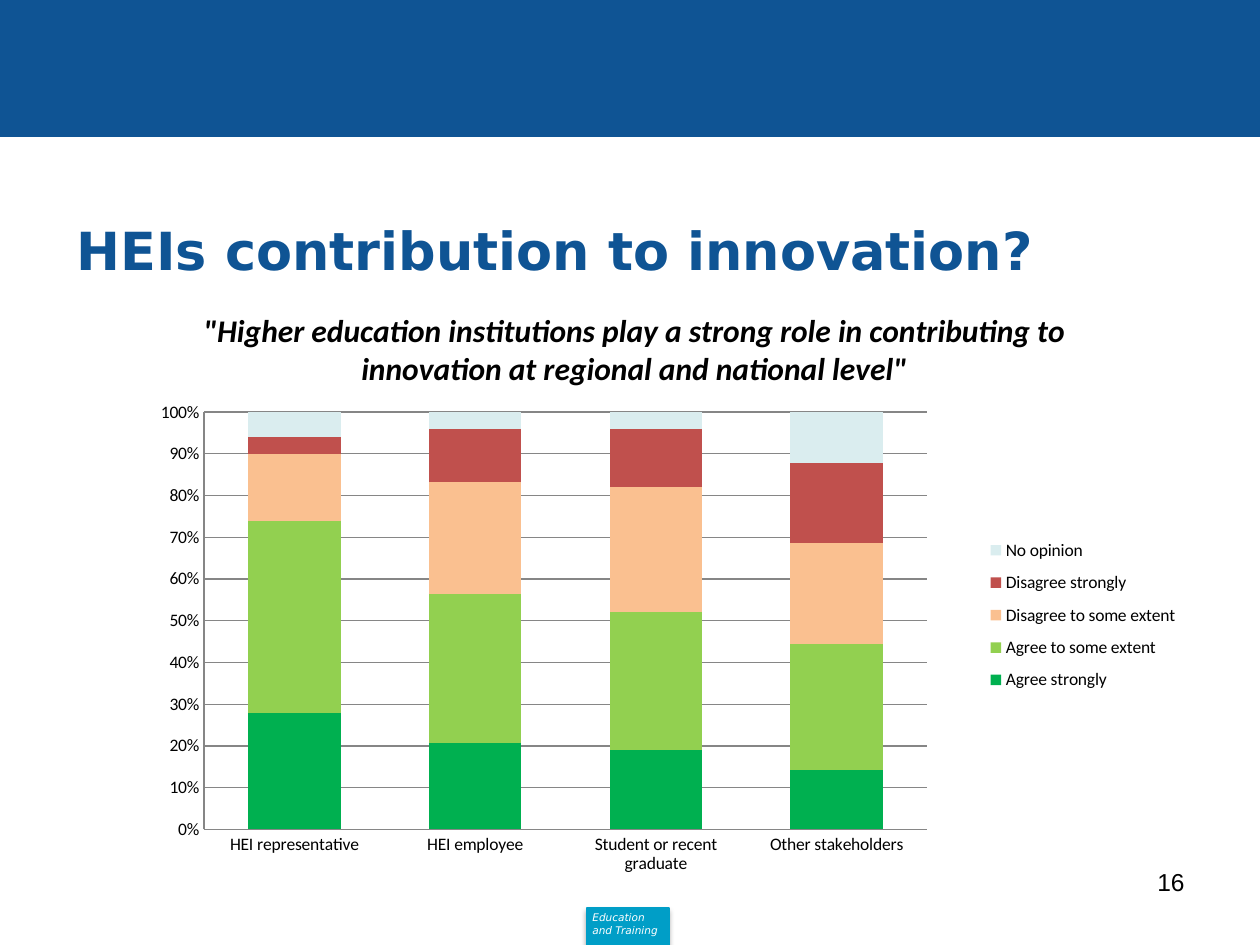
"""Build the slide on how higher education institutions contribute to innovation."""
from lxml import etree
from pptx import Presentation
from pptx import util as u
from pptx.chart.data import CategoryChartData
from pptx.dml.color import RGBColor
from pptx.enum import chart as kinds, shapes, text
from pptx.oxml import ns

NAVY = RGBColor(0x0F, 0x54, 0x94)
CYAN = RGBColor(0x00, 0x9E, 0xC7)
WHITE = RGBColor(0xFF, 0xFF, 0xFF)
BLACK = RGBColor(0x00, 0x00, 0x00)
GREY = RGBColor(0x86, 0x86, 0x86)
GREEN = RGBColor(0x00, 0xB0, 0x50)
LIME = RGBColor(0x92, 0xD0, 0x50)
PEACH = RGBColor(0xFA, 0xC0, 0x90)
RED = RGBColor(0xC0, 0x50, 0x4D)
ICE = RGBColor(0xDA, 0xED, 0xEF)
SCALE = u.Inches(1) / 126

GROUPS = ["HEI representative", "HEI employee", "Student or recent graduate", "Other stakeholders"]
ANSWERS = [
    ("Agree strongly", (28, 21, 19, 14), GREEN),
    ("Agree to some extent", (46, 36, 33, 30), LIME),
    ("Disagree to some extent", (16, 27, 30, 24), PEACH),
    ("Disagree strongly", (4, 13, 14, 19), RED),
    ("No opinion", (6, 4, 4, 12), ICE),
]


def px(*lengths):
    return [round(length * SCALE) for length in lengths]


def place(part, index, frame, inner=False):
    for old in part.findall(ns.qn("c:layout")):
        part.remove(old)
    layout = etree.Element(ns.qn("c:layout"))
    manual = etree.SubElement(layout, ns.qn("c:manualLayout"))
    settings = [("layoutTarget", "inner")] if inner else []
    settings += [("xMode", "edge"), ("yMode", "edge"), *zip("xywh", frame)]
    for name, value in settings:
        etree.SubElement(manual, ns.qn(f"c:{name}"), val=str(value))
    part.insert(index, layout)


deck = Presentation()
deck.slide_width, deck.slide_height = px(1260, 945)
page = deck.slides.add_slide(deck.slide_layouts[5])

for frame, color in [((0, 0, 1260, 136), NAVY), ((587, 908, 82, 38), CYAN)]:
    block = page.shapes.add_shape(shapes.MSO_SHAPE.RECTANGLE, *px(*frame))
    block.shadow.inherit = False
    block.fill.solid()
    block.fill.fore_color.rgb = color
    block.line.color.rgb = color
    block.line.width = u.Pt(0.75)

effects = block._element.spPr.find(ns.qn("a:effectLst"))
shadow = etree.SubElement(effects, ns.qn("a:outerShdw"), blurRad=str(u.Pt(3.1)),
                          dist=str(u.Pt(1.8)), dir="5400000", rotWithShape="0")
shade = etree.SubElement(shadow, ns.qn("a:srgbClr"), val=str(BLACK))
etree.SubElement(shade, ns.qn("a:alpha"), val="35000")

title = page.shapes.title
title.left, title.top, title.width, title.height = px(64, 185, 1134, 129)
tag = page.shapes.add_textbox(*px(580, 905, 105, 34))
number = page.shapes.add_textbox(*px(903, 861, 294, 66))

for box, words, font, size, color, align in [
    (title, "HEIs contribution to innovation?", "DejaVu Sans", 30, NAVY, text.PP_ALIGN.LEFT),
    (tag, "Education \vand Training", "DejaVu Sans", 6, WHITE, text.PP_ALIGN.LEFT),
    (number, "16", "Arial", 14, BLACK, text.PP_ALIGN.RIGHT),
]:
    box.text_frame.text = words
    box.text_frame.word_wrap = True
    box.text_frame.auto_size = text.MSO_AUTO_SIZE.NONE
    para = box.text_frame.paragraphs[0]
    para.alignment = align
    para.font.name = font
    para.font.size = u.Pt(size)
    para.font.color.rgb = color
    para.font.bold = box is title
    para.font.italic = box is tag
title.text_frame.vertical_anchor = text.MSO_ANCHOR.MIDDLE

data = CategoryChartData(number_format="0")
data.categories = GROUPS
for name, values, color in ANSWERS:
    data.add_series(name, values)
chart = page.shapes.add_chart(kinds.XL_CHART_TYPE.COLUMN_STACKED_100,
                              *px(74, 284, 1121, 625), data).chart
chart.font.name = "Calibri"
chart.font.size = u.Pt(10)
chart.font.color.rgb = BLACK

chart.has_title = True
heading = chart.chart_title.text_frame
heading.text = ('"Higher education institutions play a strong role in contributing to '
                'innovation at regional and national level"')
font = heading.paragraphs[0].font
font.name = "Calibri"
font.size = u.Pt(18)
font.bold = font.italic = True
font.color.rgb = BLACK

plot = chart.plots[0]
plot.gap_width = 95
plot.overlap = 100
plot.vary_by_categories = False
for series, (name, values, color) in zip(plot.series, ANSWERS):
    series.format.fill.solid()
    series.format.fill.fore_color.rgb = color

scale = chart.value_axis
scale.maximum_scale = 1
scale.minimum_scale = 0
scale.major_unit = 0.1
scale.has_major_gridlines = True
scale.tick_labels.number_format = "0%"
scale.tick_labels.number_format_is_linked = False
for axis in (scale, chart.category_axis):
    axis.major_tick_mark = kinds.XL_TICK_MARK.NONE
    axis.minor_tick_mark = kinds.XL_TICK_MARK.NONE
for lines in (scale, chart.category_axis, scale.major_gridlines):
    lines.format.line.color.rgb = GREY
    lines.format.line.width = u.Pt(0.75)

chart.has_legend = True
chart.legend.position = kinds.XL_LEGEND_POSITION.RIGHT
chart.legend.include_in_layout = False
place(chart.legend._element, 1, (0.81, 0.39, 0.18, 0.28))
place(chart._chartSpace.chart.plotArea, 0, (0.116, 0.205, 0.645, 0.668), inner=True)

deck.save("out.pptx")
